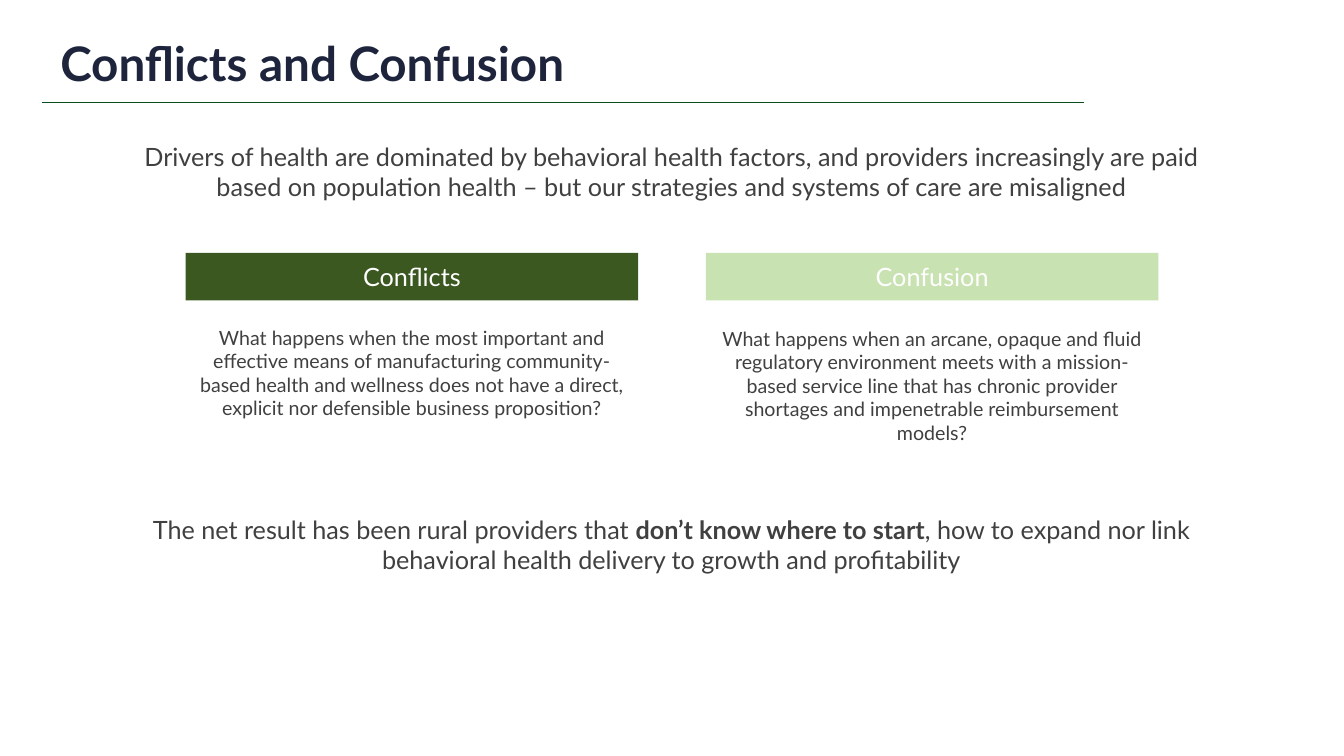
import pptx
import pptx.util
import pptx.dml.color
import pptx.enum.shapes
import pptx.enum.text
import pptx.oxml.ns
import lxml.etree
from pptx.util import Inches

ALIGN = pptx.enum.text.PP_ALIGN
ANCHOR = pptx.enum.text.MSO_ANCHOR


def color(value):
    return pptx.dml.color.RGBColor.from_string(value)


class SlideBuilder:
    font_name = "Lato"
    body_color = "404040"

    def __init__(self, slide):
        self.slide = slide

    def fill_text(self, shape, runs, size, text_color, align=ALIGN.CENTER,
                  anchor=ANCHOR.TOP, line_spacing=None):
        frame = shape.text_frame
        frame.word_wrap = True
        frame.vertical_anchor = anchor
        paragraph = frame.paragraphs[0]
        for name, value in {"alignment": align, "line_spacing": line_spacing}.items():
            setattr(paragraph, name, value)
        for text, bold in runs:
            run = paragraph.add_run()
            run.text = text
            run.font.color.rgb = color(text_color)
            formats = {"name": self.font_name, "size": pptx.util.Pt(size), "bold": bold}
            for name, value in formats.items():
                setattr(run.font, name, value)

    def text(self, box, runs, size, text_color=body_color, **formats):
        shape = self.slide.shapes.add_textbox(*map(Inches, box))
        self.fill_text(shape, runs, size, text_color, **formats)

    def banner(self, box, label, fill):
        shape = self.slide.shapes.add_shape(
            pptx.enum.shapes.MSO_SHAPE.RECTANGLE, *map(Inches, box))
        shape.shadow.inherit = False
        shape.fill.solid()
        shape.fill.fore_color.rgb = color(fill)
        shape.line.fill.background()
        self.fill_text(shape, [(label, False)], 18, "FFFFFF", anchor=ANCHOR.MIDDLE)

    def rule(self, left, right, top, line_color):
        connector = self.slide.shapes.add_connector(
            pptx.enum.shapes.MSO_CONNECTOR.STRAIGHT,
            Inches(left), Inches(top), Inches(right), Inches(top))
        connector.line.color.rgb = color(line_color)
        connector.line.width = pptx.util.Pt(1)
        properties = connector._element.spPr
        lxml.etree.SubElement(properties, pptx.oxml.ns.qn("a:effectLst"))


def main():
    presentation = pptx.Presentation()
    presentation.slide_width = Inches(13.33)
    presentation.slide_height = Inches(7.5)
    builder = SlideBuilder(presentation.slides.add_slide(presentation.slide_layouts[6]))

    builder.rule(0.42, 10.75, 1.02, "0A4E1F")
    builder.text((0.5, 0.3, 10.4, 0.66), [("Conflicts and Confusion", True)], 34, "1D243C",
                 align=ALIGN.LEFT, anchor=ANCHOR.BOTTOM, line_spacing=0.9)

    statements = [
        (1.35, [("Drivers of health are dominated by behavioral health factors, and providers "
                 "increasingly are paid based on population health – but our strategies and "
                 "systems of care are misaligned", False)]),
        (5.05, [("The net result has been rural providers that ", False),
                ("don’t know where to start", True),
                (", how to expand nor link behavioral health delivery to growth and "
                 "profitability", False)]),
    ]
    for top, runs in statements:
        builder.text((1.23, top, 10.86, 0.71), runs, 18)

    columns = [
        (1.84, 3.18, "Conflicts", "3C5821",
         "What happens when the most important and effective means of manufacturing "
         "community-based health and wellness does not have a direct, explicit nor "
         "defensible business proposition?"),
        (7, 3.19, "Confusion", "C9E2B1",
         "What happens when an arcane, opaque and fluid regulatory environment meets with "
         "a mission-based service line that has chronic provider shortages and "
         "impenetrable reimbursement models?"),
    ]
    for left, question_top, label, fill, question in columns:
        builder.banner((left, 2.51, 4.49, 0.47), label, fill)
        builder.text((left, question_top, 4.49, 1.04), [(question, False)], 14)

    presentation.save("out.pptx")


if __name__ == "__main__":
    main()
